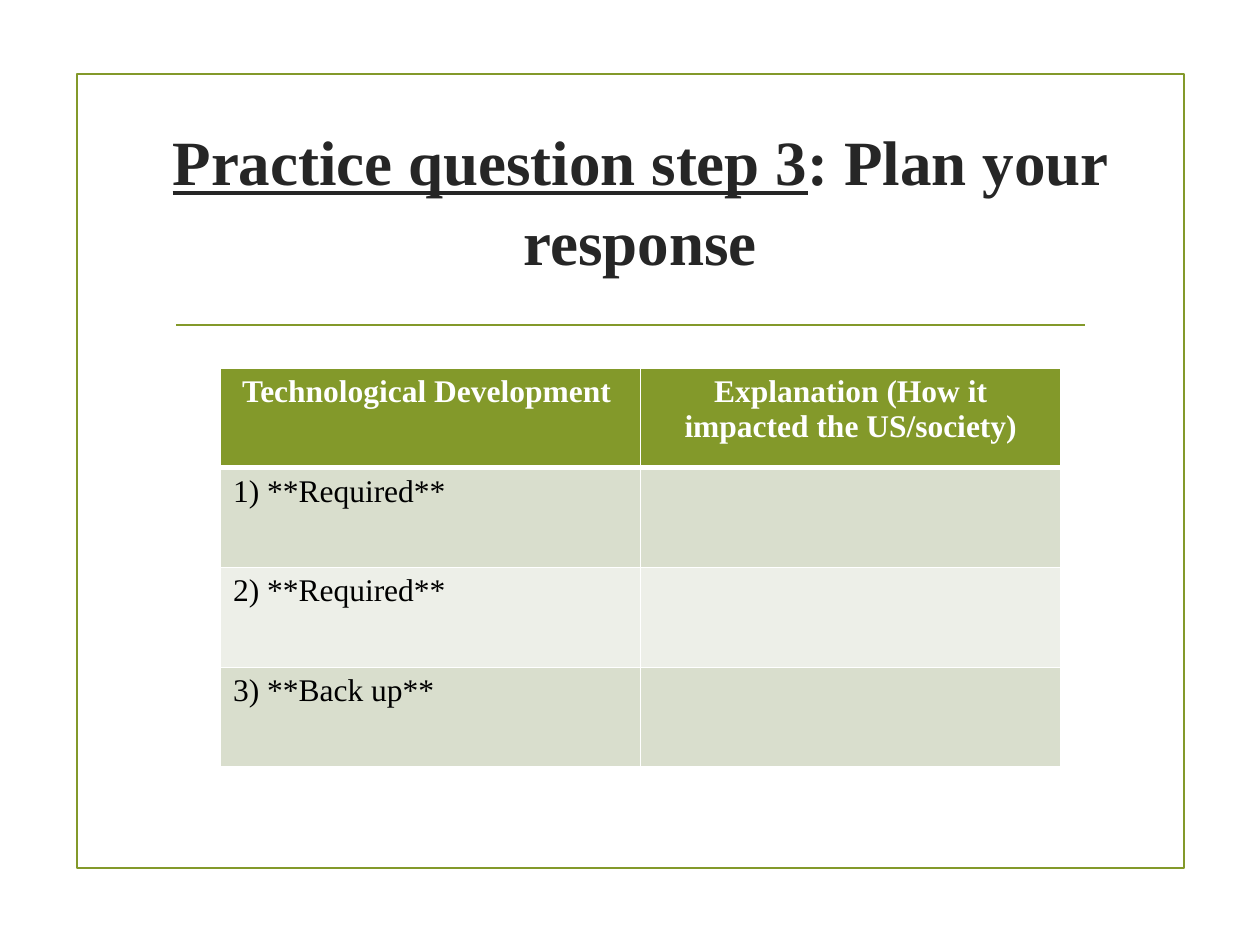
import pptx
import pptx.dml.color
import pptx.enum.shapes
import pptx.enum.text
import pptx.oxml
import pptx.oxml.ns
import pptx.util
import lxml.etree

Inches = pptx.util.Inches
Pt = pptx.util.Pt
ALIGN = pptx.enum.text.PP_ALIGN
COLORS = {
    "green": "83992A",
    "ink": "262626",
    "black": "000000",
    "white": "FFFFFF",
    "band": "D9DECD",
    "pale": "EDEFE8",
}
TITLE_FORMAT = {"name": "Times New Roman", "size": Pt(36), "bold": True}
HEADER_FORMAT = {"name": "Times New Roman", "size": Pt(18), "bold": True}
BODY_FORMAT = {"name": "Times New Roman", "size": Pt(18), "bold": False}
ROWS = [
    ["Technological Development ", "Explanation (How it impacted the US/society)"],
    ["1) **Required**", ""],
    ["2) **Required**", ""],
    ["3) **Back up**", ""],
]


def rgb(name):
    return pptx.dml.color.RGBColor.from_string(COLORS[name])


def format_font(font, values, color):
    for key, value in values.items():
        setattr(font, key, value)
    font.color.rgb = rgb(color)


def add_frame(page, left, top, width, height):
    frame = page.shapes.add_shape(
        pptx.enum.shapes.MSO_SHAPE.RECTANGLE, left, top, width, height
    )
    frame.shadow.inherit = False
    frame.fill.background()
    frame.line.color.rgb = rgb("green")
    frame.line.width = Pt(1.25)


def add_rule(page, left, top, width):
    rule = page.shapes.add_connector(
        pptx.enum.shapes.MSO_CONNECTOR.STRAIGHT, left, top, left + width, top
    )
    rule.line.color.rgb = rgb("green")
    rule.line.width = Pt(1.25)
    lxml.etree.SubElement(
        rule._element.spPr, pptx.oxml.ns.qn("a:effectLst")
    )


def fill_title(page, left, top, width, height):
    title = page.shapes.title
    box = {"left": left, "top": top, "width": width, "height": height}
    for key, value in box.items():
        setattr(title, key, value)
    frame_format = {
        "word_wrap": True,
        "auto_size": pptx.enum.text.MSO_AUTO_SIZE.NONE,
        "vertical_anchor": pptx.enum.text.MSO_ANCHOR.MIDDLE,
        "margin_top": Inches(0.12),
        "margin_bottom": Inches(0.05),
    }
    for key, value in frame_format.items():
        setattr(title.text_frame, key, value)
    para = title.text_frame.paragraphs[0]
    para.alignment = ALIGN.CENTER
    para.line_spacing = 1.06
    for text, underline in [
        ("Practice question step 3", True),
        (": Plan your response", False),
    ]:
        span = para.add_run()
        span.text = text
        format_font(span.font, TITLE_FORMAT, "ink")
        span.font.underline = underline


def set_borders(cell, widths):
    properties = cell._tc.get_or_add_tcPr()
    for index, (side, width) in enumerate(widths.items()):
        border = pptx.oxml.parse_xml(
            f'<a:{side} {pptx.oxml.ns.nsdecls("a")} w="{Pt(width)}">'
            f'<a:solidFill><a:srgbClr val="{COLORS["white"]}"/></a:solidFill>'
            f"</a:{side}>"
        )
        properties.insert(index, border)


def add_plan_table(page, left, top, width, height):
    table = page.shapes.add_table(
        len(ROWS), len(ROWS[0]), left, top, width, height
    ).table
    for row_index, texts in enumerate(ROWS):
        header = row_index == 0
        fill = "green" if header else "band" if row_index % 2 else "pale"
        for column_index, text in enumerate(texts):
            cell = table.cell(row_index, column_index)
            cell.fill.solid()
            cell.fill.fore_color.rgb = rgb(fill)
            set_borders(cell, {
                "lnL": 1,
                "lnR": 1,
                "lnT": 3 if row_index == 1 else 1,
                "lnB": 3 if header else 1,
            })
            para = cell.text_frame.paragraphs[0]
            para.alignment = ALIGN.CENTER if header else ALIGN.LEFT
            if text:
                span = para.add_run()
                span.text = text
                format_font(
                    span.font,
                    HEADER_FORMAT if header else BODY_FORMAT,
                    "white" if header else "black",
                )


def main():
    deck = pptx.Presentation()
    deck.slide_width = Inches(10)
    deck.slide_height = Inches(7.5)
    page = deck.slides.add_slide(deck.slide_layouts.get_by_name("Title Only"))
    add_frame(page, Inches(0.61), Inches(0.59), Inches(8.79), Inches(6.3))
    add_rule(page, Inches(1.4), Inches(2.58), Inches(7.21))
    fill_title(page, Inches(0.58), Inches(1.08), Inches(9), Inches(0.92))
    add_plan_table(page, Inches(1.75), Inches(2.92), Inches(6.67), Inches(3.17))
    deck.save("out.pptx")


if __name__ == "__main__":
    main()
